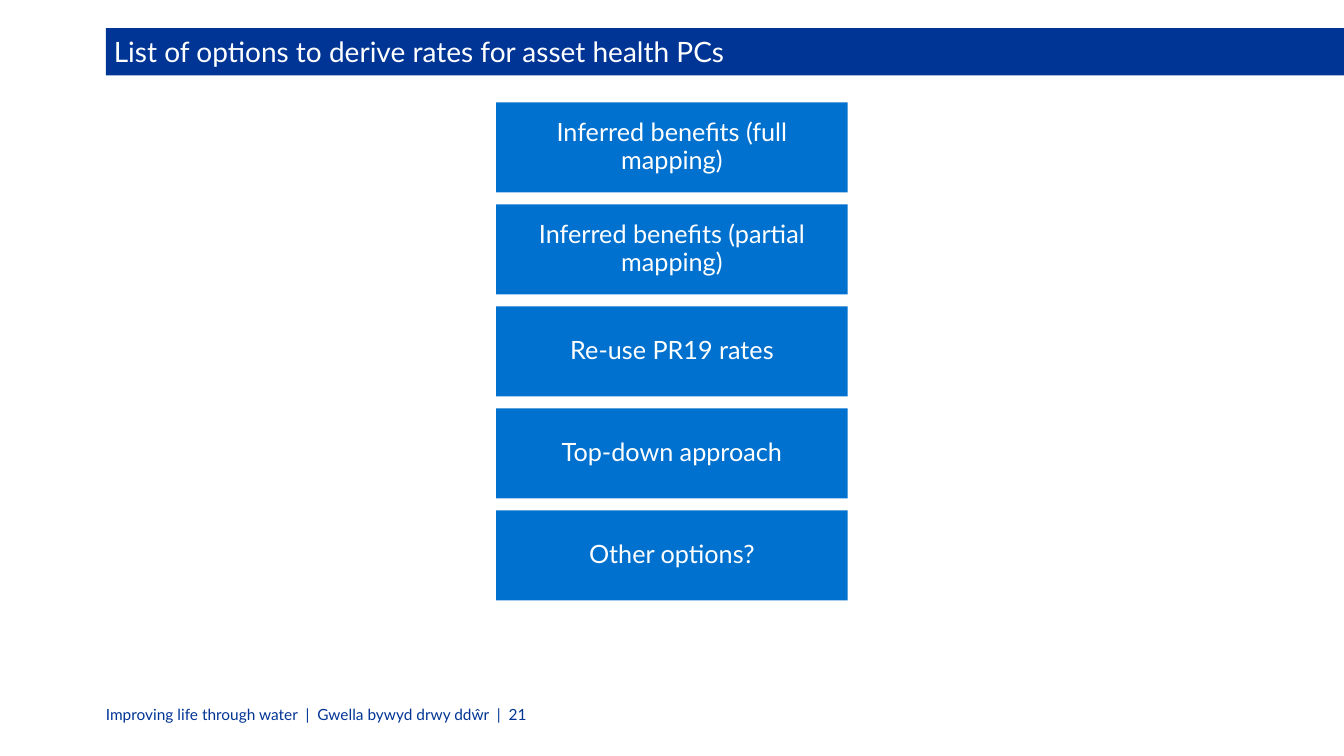
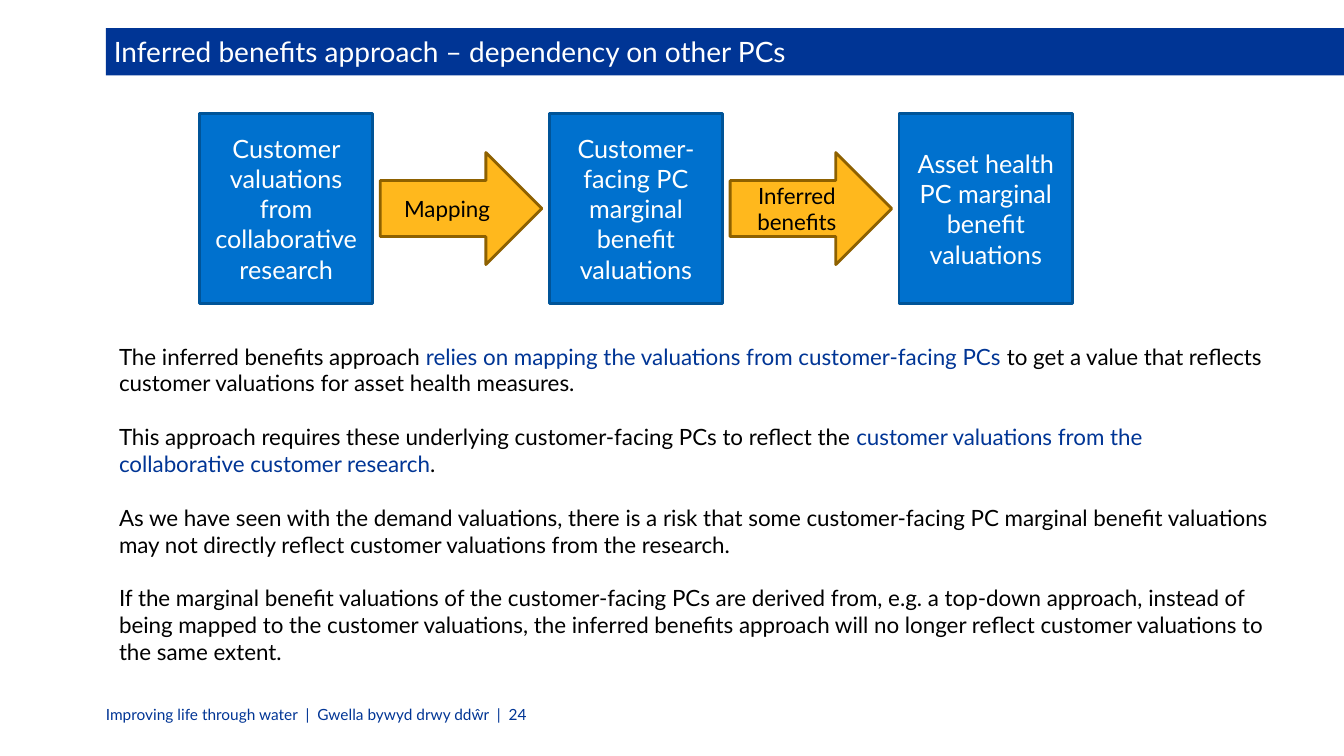
from lxml import etree
from pptx import Presentation
from pptx.dml.color import RGBColor
from pptx.enum import shapes, text
from pptx.oxml import ns
from pptx.util import Pt

FONT = "Lato"
NAVY, BLUE, BLUE_EDGE = "003595", "0071CE", "005498"
AMBER, AMBER_EDGE = "FFB81D", "8E6100"
WHITE, BLACK = "FFFFFF", "000000"
PAGE_WIDTH, PAGE_HEIGHT, MARGIN = 960, 540, 75.6
LEFT, CENTER = text.PP_ALIGN.LEFT, text.PP_ALIGN.CENTER
TITLE_ONLY, TITLE_AND_BODY = 5, 1

FOOTER = "Improving life through water  |  Gwella bywyd drwy ddŵr  |  {}"

OPTIONS = [
    "Inferred benefits (full mapping)",
    "Inferred benefits (partial mapping)",
    "Re-use PR19 rates",
    "Top-down approach",
    "Other options?",
]
STAGES = [
    "Customer valuations from collaborative research",
    "Customer-facing PC marginal benefit valuations",
    "Asset health PC marginal benefit valuations",
]
STEPS = ["Mapping", "Inferred benefits"]

# Each paragraph is a list of (text, colour) spans.
EXPLANATION = [
    [("The inferred benefits approach ", BLACK),
     ("relies on mapping the valuations from customer-facing PCs ", NAVY),
     ("to get a value that reflects customer valuations for asset health measures.", BLACK)],
    [("This approach requires these underlying customer-facing PCs to reflect the ", BLACK),
     ("customer valuations from the collaborative customer research", NAVY),
     (".", BLACK)],
    [("As we have seen with the demand valuations, there is a risk that some "
      "customer-facing PC marginal benefit valuations may not directly reflect "
      "customer valuations from the research.", BLACK)],
    [("If the marginal benefit valuations of the customer-facing PCs are derived from, "
      "e.g. a top-down approach, instead of being mapped to the customer valuations, "
      "the inferred benefits approach will no longer reflect customer valuations to "
      "the same extent.", BLACK)],
]


def rgb(colour):
    return RGBColor.from_string(colour)


def place(box, left, top, width, height):
    box.left, box.top, box.width, box.height = map(Pt, (left, top, width, height))


def set_frame(box, insets, anchor=text.MSO_ANCHOR.MIDDLE):
    """Set wrapping, anchor and insets (left, top, right, bottom)."""
    frame = box.text_frame
    frame.word_wrap = True
    frame.auto_size = text.MSO_AUTO_SIZE.NONE
    frame.vertical_anchor = anchor
    (frame.margin_left, frame.margin_top,
     frame.margin_right, frame.margin_bottom) = map(Pt, insets)
    return frame


def write(frame, words, size, colour, align):
    para = frame.paragraphs[0]
    para.text = words
    para.alignment = align
    para.font.name, para.font.size = FONT, Pt(size)
    para.font.color.rgb = rgb(colour)
    return para


def fill(box, colour):
    box.fill.solid()
    box.fill.fore_color.rgb = rgb(colour)


def add_block(page, kind, area, words, size=18, ink=WHITE, colour=BLUE, edge=None,
              insets=(7.2, 3.6, 7.2, 3.6)):
    """Add a filled shape with centred text and return its paragraph."""
    box = page.shapes.add_shape(kind, *map(Pt, area))
    box.shadow.inherit = False
    fill(box, colour)
    if edge:
        box.line.color.rgb = rgb(edge)
        box.line.width = Pt(2)
    else:
        box.line.fill.background()
    return write(set_frame(box, insets), words, size, ink, CENTER)


def add_page(deck, layout, title, number):
    """Add a slide with the title band and the footer."""
    page = deck.slides.add_slide(deck.slide_layouts[layout])
    band = page.shapes.title
    place(band, MARGIN, 20, PAGE_WIDTH - MARGIN, 33.8)
    fill(band, NAVY)
    write(set_frame(band, (5.7, 2.8, 28, 2.8)), title, 20, WHITE, LEFT)
    footer = page.shapes.add_textbox(*map(Pt, (MARGIN, 503.4, 491, 13.6)))
    write(set_frame(footer, (0, 0, 0, 0)), FOOTER.format(number), 11, NAVY,
          text.PP_ALIGN.JUSTIFY)
    return page


def add_options(page):
    width, height, top, pitch = 251.2, 64.3, 73.2, 72.85
    left = (PAGE_WIDTH - width) / 2
    for row, option in enumerate(OPTIONS):
        para = add_block(page, shapes.MSO_SHAPE.RECTANGLE,
                         (left, top + row * pitch, width, height), option,
                         insets=(13.7, 7.9, 13.7, 7.9))
        para.line_spacing = 0.9


def add_flow(page):
    left, top, pitch = 142.4, 81, 249.9
    stage_width, stage_height = 124, 136
    arrow_width, arrow_height = 115.4, 80
    arrow_left = left + stage_width + (pitch - stage_width - arrow_width) / 2
    arrow_top = top + (stage_height - arrow_height) / 2
    for column, stage in enumerate(STAGES):
        add_block(page, shapes.MSO_SHAPE.RECTANGLE,
                  (left + column * pitch, top, stage_width, stage_height),
                  stage, edge=BLUE_EDGE)
    for column, step in enumerate(STEPS):
        add_block(page, shapes.MSO_SHAPE.RIGHT_ARROW,
                  (arrow_left + column * pitch, arrow_top, arrow_width, arrow_height),
                  step, 16, BLACK, AMBER, AMBER_EDGE)


def add_explanation(page):
    body = page.placeholders[1]
    place(body, 85, 244.8, 822, 235.4)
    frame = set_frame(body, (0, 0, 0, 0), text.MSO_ANCHOR.TOP)
    for index, spans in enumerate(EXPLANATION):
        para = frame.add_paragraph() if index else frame.paragraphs[0]
        properties = para._p.get_or_add_pPr()
        properties.set("marL", "0")
        properties.set("indent", "0")
        etree.SubElement(properties, ns.qn("a:buNone"))
        para.alignment = LEFT
        para.space_before = Pt(19.2 if index else 0)
        para.font.name, para.font.size = FONT, Pt(16)
        for words, colour in spans:
            span = para.add_run()
            span.text = words
            span.font.color.rgb = rgb(colour)


def main():
    deck = Presentation()
    deck.slide_width, deck.slide_height = Pt(PAGE_WIDTH), Pt(PAGE_HEIGHT)
    add_options(add_page(deck, TITLE_ONLY,
                         "List of options to derive rates for asset health PCs", 21))
    page = add_page(deck, TITLE_AND_BODY,
                    "Inferred benefits approach – dependency on other PCs", 24)
    add_flow(page)
    add_explanation(page)
    deck.save("out.pptx")


if __name__ == "__main__":
    main()
